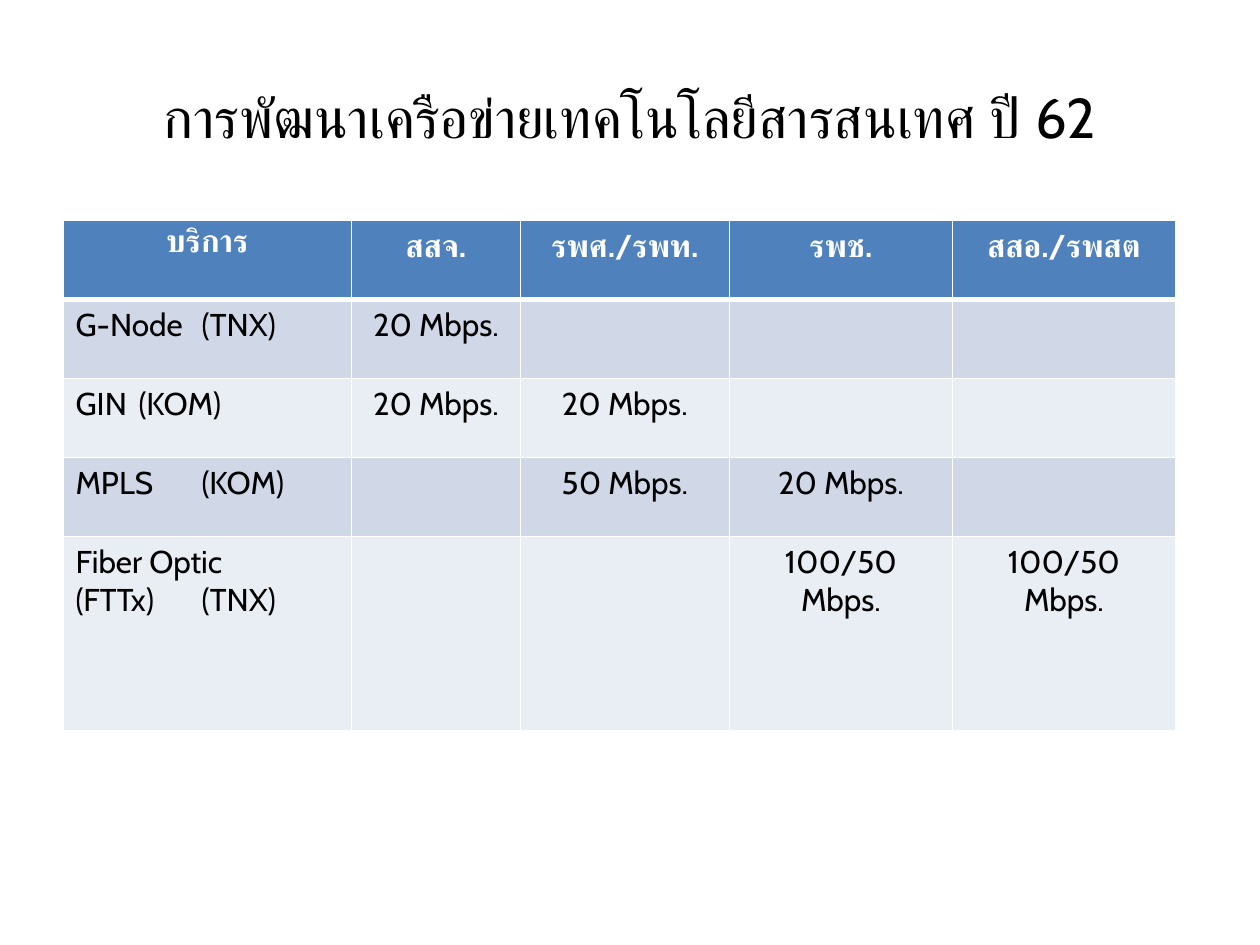
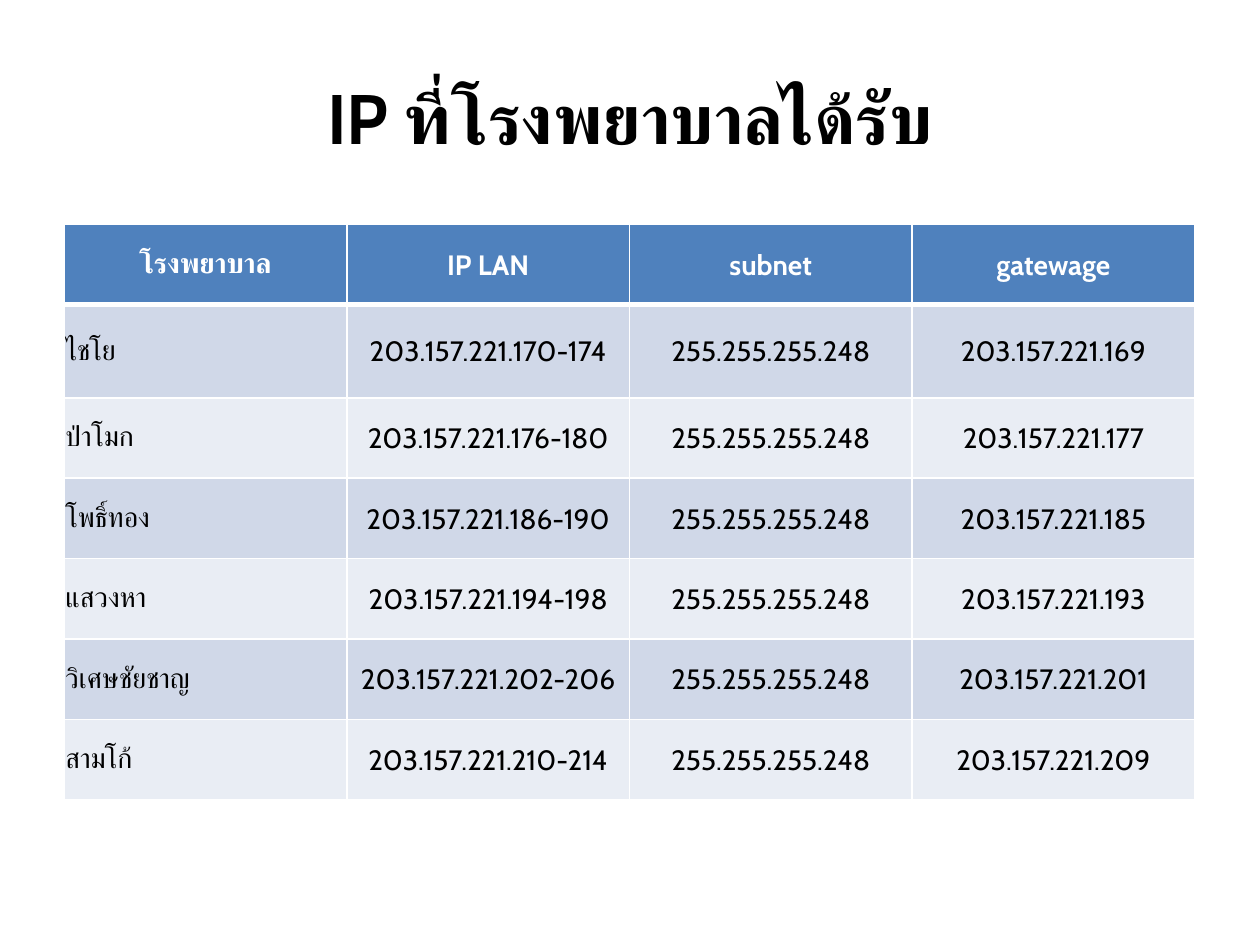
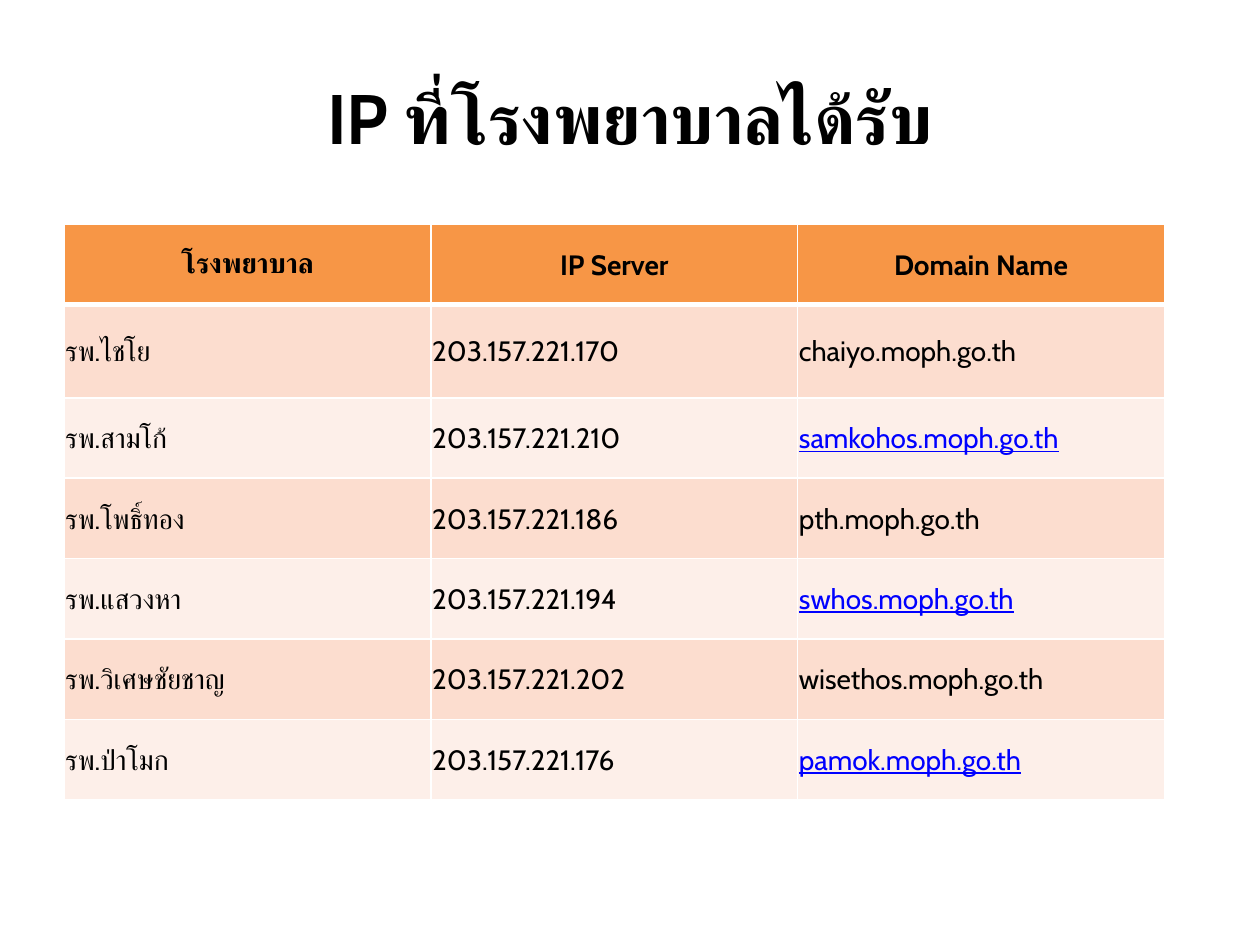
import pptx
import pptx.dml.color
import pptx.enum.text
import pptx.oxml
import pptx.oxml.ns
import pptx.util

RGBColor = pptx.dml.color.RGBColor
Align = pptx.enum.text.PP_ALIGN
Anchor = pptx.enum.text.MSO_ANCHOR

BLACK = RGBColor(0x00, 0x00, 0x00)
WHITE = RGBColor(0xFF, 0xFF, 0xFF)
LINK_BLUE = RGBColor(0x00, 0x00, 0xFF)
BLUE = RGBColor(0x4F, 0x81, 0xBD)
BLUE_BAND = RGBColor(0xD0, 0xD8, 0xE8)
BLUE_PALE = RGBColor(0xE9, 0xED, 0xF4)
ORANGE = RGBColor(0xF7, 0x96, 0x46)
ORANGE_BAND = RGBColor(0xFC, 0xDD, 0xCF)
ORANGE_PALE = RGBColor(0xFD, 0xEF, 0xE9)

BLUE_THEME = {"header": BLUE, "header_text": WHITE, "bands": (BLUE_BAND, BLUE_PALE)}
ORANGE_THEME = {"header": ORANGE, "header_text": BLACK, "bands": (ORANGE_BAND, ORANGE_PALE)}

GRID_COLUMNS, GRID_ROWS = 100, 75
THIN, THICK = 1, 3

SERVICE_HEADER = ("บริการ", "สสจ.", "รพศ./รพท.", "รพช.", "สสอ./รพสต")
SERVICES = (
    ("G-Node\t(TNX)", "20 Mbps.", "", "", ""),
    ("GIN\t(KOM)", "20 Mbps.", "20 Mbps.", "", ""),
    ("MPLS\t(KOM)", "", "50 Mbps.", "20 Mbps.", ""),
    ("Fiber Optic\n(FTTx)\t(TNX)", "", "", "100/50 Mbps.", "100/50 Mbps."),
)

IP_TITLE = "IP ที่โรงพยาบาลได้รับ"
NETWORK = "203.157.221."
SUBNET = "255.255.255.248"
LAN_HEADER = ("โรงพยาบาล", "IP LAN", "subnet", "gatewage")
LANS = (
    ("ไชโย", "170-174", "169"),
    ("ป่าโมก", "176-180", "177"),
    ("โพธิ์ทอง", "186-190", "185"),
    ("แสวงหา", "194-198", "193"),
    ("วิเศษชัยชาญ", "202-206", "201"),
    ("สามโก้", "210-214", "209"),
)

SERVER_HEADER = ("โรงพยาบาล", "IP Server", "Domain Name")
SERVERS = (
    ("ไชโย", "170", "chaiyo"),
    ("สามโก้", "210", "samkohos"),
    ("โพธิ์ทอง", "186", "pth"),
    ("แสวงหา", "194", "swhos"),
    ("วิเศษชัยชาญ", "202", "wisethos"),
    ("ป่าโมก", "176", "pamok"),
)
DOMAIN = ".moph.go.th"
LINKED_DOMAINS = {name + DOMAIN for name in ("samkohos", "swhos", "pamok")}

IP_LAYOUT = {
    "left": 5.1,
    "top": 17.8,
    "heights": [6.38, 7.4] + [6.38] * 5,
    "size": 16,
    "cell_format": {
        "vertical_anchor": Anchor.MIDDLE,
        "margin_left": pptx.util.Inches(0.01),
        "margin_right": pptx.util.Inches(0.01),
        "margin_top": pptx.util.Inches(0.01),
        "margin_bottom": 0,
    },
}


def apply_format(target, values):
    for name, value in values.items():
        setattr(target, name, value)


class Deck:
    """Holds the shared style and the current slide; lengths are grid columns and rows."""

    font_name = "Cabin"

    def __init__(self):
        self.presentation = pptx.Presentation()
        self.presentation.slide_width = pptx.util.Inches(10)
        self.presentation.slide_height = pptx.util.Inches(7.5)
        self.slide = None

    def across(self, columns):
        return round(self.presentation.slide_width * columns / GRID_COLUMNS)

    def down(self, rows):
        return round(self.presentation.slide_height * rows / GRID_ROWS)

    def new_slide(self, title, **title_format):
        self.slide = self.presentation.slides.add_slide(self.presentation.slide_layouts[6])
        box = self.slide.shapes.add_textbox(
            self.across(5), self.down(3), self.across(90), self.down(12.5))
        apply_format(box.text_frame, {"word_wrap": True, "vertical_anchor": Anchor.MIDDLE})
        self.set_text(box.text_frame, title, Align.CENTER, **title_format)

    def set_text(self, text_frame, text, alignment, size, color=BLACK, bold=False,
                 underline=False):
        text_frame.text = text
        for paragraph in text_frame.paragraphs:
            paragraph.alignment = alignment
            for run in paragraph.runs:
                apply_format(run.font, {
                    "name": self.font_name, "size": pptx.util.Pt(size),
                    "bold": bold, "underline": underline})
                run.font.color.rgb = color

    def border(self, cell, **widths):
        """Draw white cell borders; must run before the cell is filled."""
        properties = cell._tc.get_or_add_tcPr()
        for side in "LRTB":
            width = pptx.util.Pt(widths.get(side, THIN))
            properties.append(pptx.oxml.parse_xml(
                f'<a:ln{side} {pptx.oxml.ns.nsdecls("a")} w="{width}">'
                f'<a:solidFill><a:srgbClr val="{WHITE}"/></a:solidFill></a:ln{side}>'))

    def table(self, header, body, theme, left, top, widths, heights, size,
              centered, cell_format):
        """Add a banded table; centered is the set of body columns with centred text."""
        frame = self.slide.shapes.add_table(
            len(heights), len(widths), self.across(left), self.down(top),
            self.across(sum(widths)), self.down(sum(heights)))
        table = frame.table
        apply_format(table, {"first_row": False, "horz_banding": False})
        for column, width in zip(table.columns, widths):
            column.width = self.across(width)
        for row, height in zip(table.rows, heights):
            row.height = self.down(height)

        for row_index, texts in enumerate([header, *body]):
            is_header = row_index == 0
            fill = theme["header"] if is_header else theme["bands"][(row_index - 1) % 2]
            for column_index, text in enumerate(texts):
                cell = table.cell(row_index, column_index)
                self.border(cell, B=THICK if is_header else THIN,
                            T=THICK if row_index == 1 else THIN)
                cell.fill.solid()
                cell.fill.fore_color.rgb = fill
                apply_format(cell, cell_format)
                linked = text in LINKED_DOMAINS
                color = LINK_BLUE if linked else theme["header_text"] if is_header else BLACK
                middle = is_header or column_index in centered
                self.set_text(cell.text_frame, text, Align.CENTER if middle else Align.LEFT,
                              size, color, bold=is_header, underline=linked)


def main():
    deck = Deck()

    deck.new_slide("การพัฒนาเครือข่ายเทคโนโลยีสารสนเทศ ปี 62", size=32)
    deck.table(SERVICE_HEADER, SERVICES, BLUE_THEME, left=5, top=17.5,
               widths=[22.9, 13.4, 16.6, 17.7, 17.7], heights=[6.27] * 4 + [15.4],
               size=18, centered={1, 2, 3, 4}, cell_format={})

    deck.new_slide(IP_TITLE, size=40, bold=True)
    lan_rows = [(hospital, NETWORK + addresses, SUBNET, NETWORK + gateway)
                for hospital, addresses, gateway in LANS]
    deck.table(LAN_HEADER, lan_rows, BLUE_THEME, widths=[22.43] * 4,
               centered={1, 2, 3}, **IP_LAYOUT)

    deck.new_slide(IP_TITLE, size=40, bold=True)
    server_rows = [("รพ." + hospital, NETWORK + host, name + DOMAIN)
                   for hospital, host, name in SERVERS]
    deck.table(SERVER_HEADER, server_rows, ORANGE_THEME, widths=[29.11] * 3,
               centered=set(), **IP_LAYOUT)

    deck.presentation.save("out.pptx")


if __name__ == "__main__":
    main()
